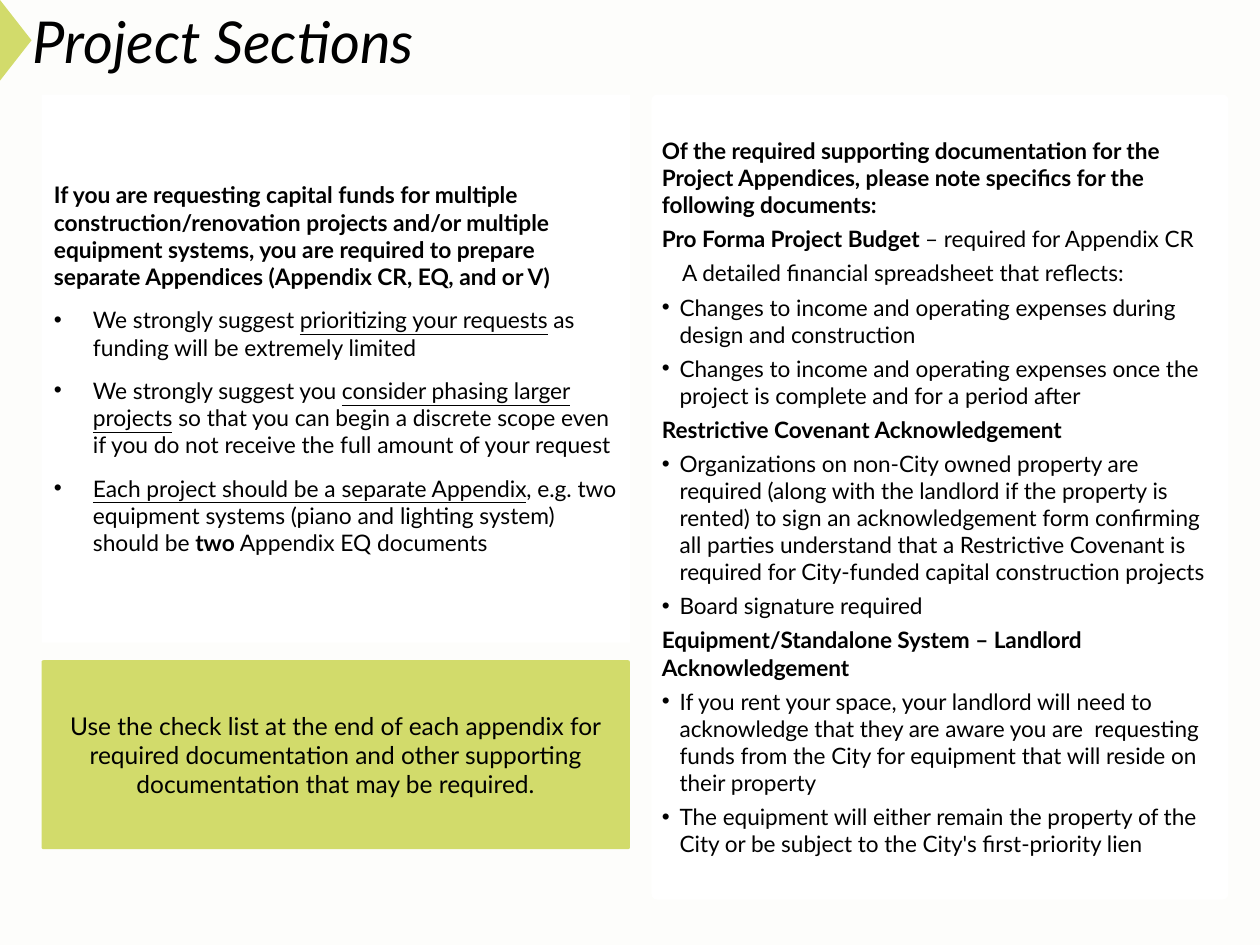
from lxml.etree import SubElement
from pptx import Presentation
from pptx.dml.color import RGBColor
from pptx.enum.shapes import MSO_SHAPE
from pptx.enum.text import MSO_ANCHOR, PP_ALIGN
from pptx.oxml.ns import qn
from pptx.util import Inches, Pt

BLACK = RGBColor(0x00, 0x00, 0x00)
WHITE = RGBColor(0xFF, 0xFF, 0xFF)
PAPER = RGBColor(0xFD, 0xFD, 0xFB)
LIME = RGBColor(0xD2, 0xDB, 0x6B)
FONT = "Lato"

# A paragraph is (kind, runs); a run is (text, style).
PLAIN, BOLD, UNDERLINE = {}, {"bold": True}, {"underline": True}
TITLE = [("title", [("Project Sections", {"italic": True})])]
REQUESTS = [
    ("text", [("If you are requesting capital funds for multiple construction/renovation "
               "projects and/or multiple equipment systems, you are required to prepare "
               "separate Appendices (Appendix CR, EQ, and or V)", BOLD)]),
    ("wide bullet", [("We strongly suggest ", PLAIN),
                     ("prioritizing your requests", UNDERLINE),
                     (" as funding will be extremely limited", PLAIN)]),
    ("wide bullet", [("We strongly suggest you ", PLAIN),
                     ("consider phasing larger projects", UNDERLINE),
                     (" so that you can begin a discrete scope even if you do not "
                      "receive the full amount of your request", PLAIN)]),
    ("wide bullet", [("Each project should be a separate Appendix", UNDERLINE),
                     (", e.g. two equipment systems (piano and lighting system) "
                      "should be ", PLAIN),
                     ("two", BOLD),
                     (" Appendix EQ documents", PLAIN)]),
]
CHECKLIST = [
    ("centred", [("Use the check list at the end of each appendix for required documentation "
                  "and other supporting documentation that may be required.", PLAIN)]),
]
DOCUMENTS = [
    ("text", [("Of the required supporting documentation for the Project Appendices, "
               "please note specifics for the following documents:", BOLD)]),
    ("text", [("Pro Forma Project Budget ", BOLD), ("– required for Appendix CR", PLAIN)]),
    ("indented", [("A detailed financial spreadsheet that reflects:", PLAIN)]),
    ("bullet", [("Changes to income and operating expenses during design and "
                 "construction", PLAIN)]),
    ("bullet", [("Changes to income and operating expenses once the project is complete "
                 "and for a period after", PLAIN)]),
    ("text", [("Restrictive Covenant Acknowledgement", BOLD)]),
    ("bullet", [("Organizations on non-City owned property are required (along with the "
                 "landlord if the property is rented) to sign an acknowledgement form "
                 "confirming all parties understand that a Restrictive Covenant is required "
                 "for City-funded capital construction projects", PLAIN)]),
    ("bullet", [("Board signature required", PLAIN)]),
    ("text", [("Equipment/Standalone System – Landlord Acknowledgement", BOLD)]),
    ("bullet", [("If you rent your space, your landlord will need to acknowledge that they "
                 "are aware you are  requesting funds from the City for equipment that will "
                 "reside on their property", PLAIN)]),
    ("bullet", [("The equipment will either remain the property of the City or be subject "
                 "to the City's first-priority lien", PLAIN)]),
]

# Left margin and first-line indent in inches
INDENTS = {"title": (0.19, 0), "text": (0, 0), "centred": (0, 0), "indented": (0.16, 0),
           "bullet": (0.14, -0.14), "wide bullet": (0.31, -0.31)}

# Slide grid in inches
WIDTH, HEIGHT = 10, 7.5
TITLE_HEIGHT = 0.64
MARKER_WIDTH = 0.25
LEFT, COLUMN_WIDTH = 0.33, 4.67
RIGHT, RIGHT_WIDTH = 5.17, 4.58
TOP, UPPER_HEIGHT, RIGHT_HEIGHT = 0.75, 4.35, 6.39
LOWER_TOP, LOWER_HEIGHT = 5.24, 1.5


def add_panel(slide, preset, box, fill, corner=None):
    shape = slide.shapes.add_shape(preset, *map(Inches, box))
    shape.shadow.inherit = False
    shape.fill.solid()
    shape.fill.fore_color.rgb = fill
    shape.line.fill.background()
    if corner is not None:
        shape.adjustments[0] = corner
    return shape


def set_indent(paragraph, kind):
    properties = paragraph._p.get_or_add_pPr()
    margin, indent = INDENTS[kind]
    properties.set("marL", str(Inches(margin)))
    properties.set("indent", str(Inches(indent)))
    if kind.endswith("bullet"):
        color = SubElement(properties, qn("a:buClr"))
        SubElement(color, qn("a:srgbClr"), val=str(BLACK))
        SubElement(properties, qn("a:buFont"), typeface="Arial")
        SubElement(properties, qn("a:buChar"), char="•")
    else:
        SubElement(properties, qn("a:buNone"))


def write(shape, paragraphs, size, before=0, after=0, inset=(0.07, 0.04)):
    frame = shape.text_frame
    side, end = map(Inches, inset)
    frame_format = {"word_wrap": True, "vertical_anchor": MSO_ANCHOR.MIDDLE,
                    "margin_left": side, "margin_right": side,
                    "margin_top": end, "margin_bottom": end}
    for name, value in frame_format.items():
        setattr(frame, name, value)
    for index, (kind, runs) in enumerate(paragraphs):
        paragraph = frame.add_paragraph() if index else frame.paragraphs[0]
        set_indent(paragraph, kind)
        paragraph.alignment = PP_ALIGN.CENTER if kind == "centred" else PP_ALIGN.LEFT
        paragraph.space_before = Pt(before if index else 0)
        paragraph.space_after = Pt(after)
        for text, style in runs:
            run = paragraph.add_run()
            run.text = text
            run.font.color.rgb = BLACK
            for name, value in {"name": FONT, "size": Pt(size), **style}.items():
                setattr(run.font, name, value)


def main():
    presentation = Presentation()
    presentation.slide_width, presentation.slide_height = Inches(WIDTH), Inches(HEIGHT)
    slide = presentation.slides.add_slide(presentation.slide_layouts[6])
    slide.background.fill.solid()
    slide.background.fill.fore_color.rgb = PAPER

    title = slide.shapes.add_textbox(0, 0, Inches(WIDTH), Inches(TITLE_HEIGHT))
    write(title, TITLE, 33)

    checklist = add_panel(slide, MSO_SHAPE.ROUNDED_RECTANGLE,
                          (LEFT, LOWER_TOP, COLUMN_WIDTH, LOWER_HEIGHT), LIME, 0.01)
    write(checklist, CHECKLIST, 14)

    documents = add_panel(slide, MSO_SHAPE.ROUNDED_RECTANGLE,
                          (RIGHT, TOP, RIGHT_WIDTH, RIGHT_HEIGHT), WHITE, 0.01)
    write(documents, DOCUMENTS, 12.9, before=4)

    # The marker is turned about its centre, to stand at the left edge beside the title
    offset = (TITLE_HEIGHT - MARKER_WIDTH) / 2
    marker = add_panel(slide, MSO_SHAPE.FLOWCHART_EXTRACT,
                       (-offset, offset, TITLE_HEIGHT, MARKER_WIDTH), LIME)
    marker.rotation = 90

    requests = add_panel(slide, MSO_SHAPE.RECTANGLE,
                         (LEFT, TOP, COLUMN_WIDTH, UPPER_HEIGHT), WHITE)
    write(requests, REQUESTS, 13, before=4.5, after=4.5, inset=(0.1, 0.05))

    presentation.save("out.pptx")


if __name__ == "__main__":
    main()
